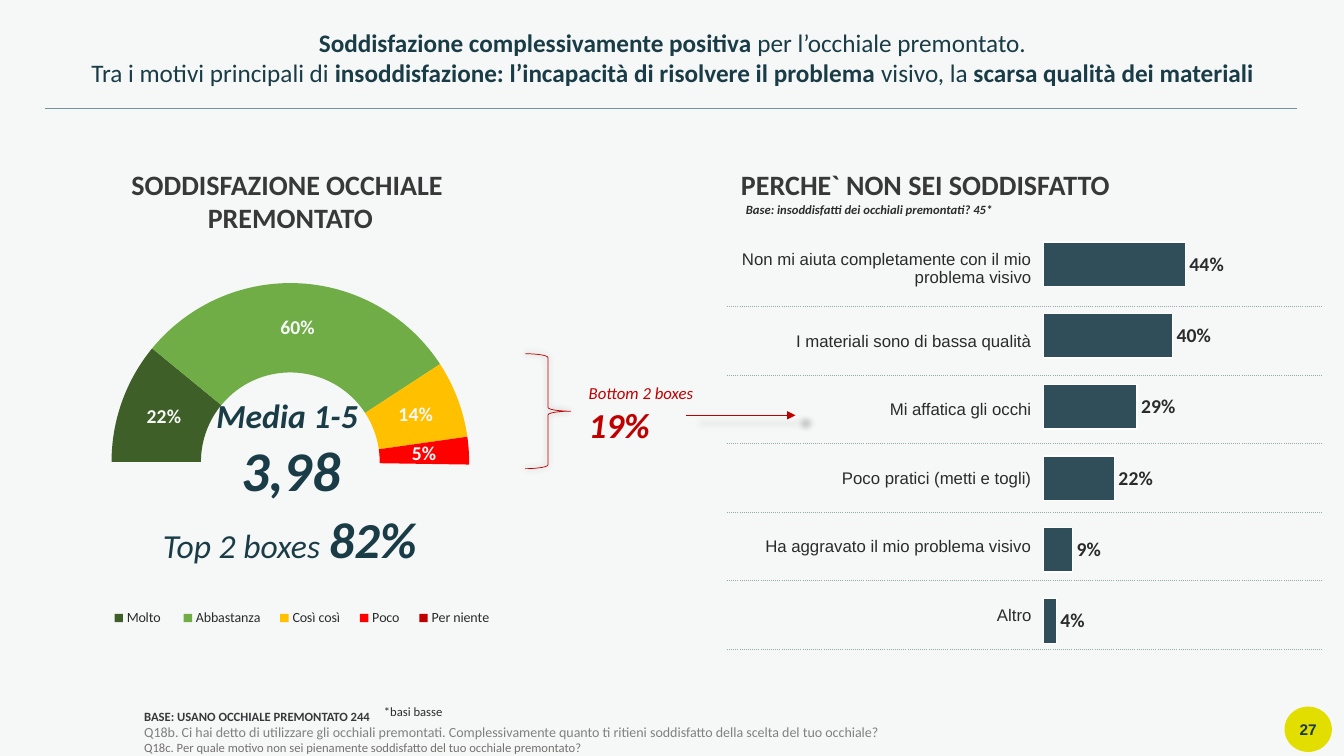
from dataclasses import dataclass
from lxml import etree
from pptx import Presentation
from pptx import util as u
from pptx.chart import data as cd
from pptx.dml import color as dml
from pptx.enum import chart as ce, shapes as se, text as te
from pptx.oxml import parse_xml
from pptx.oxml.ns import nsdecls, qn

HEX = {"back": "F6F8F8", "navy": "1A3C47", "deep": "193B47", "dark": "383839", "ink": "2B2B2B",
       "gray": "808080", "dim": "767171", "red": "C00000", "rule": "76929C", "dots": "95ACAC",
       "lime": "E2DE00", "bar": "304E59", "white": "FFFFFF"}
RING = ["3E5F27", "70AD47", "FFC000", "FF0000", "C00000"]
LEFT, MID, RIGHT = te.PP_ALIGN.LEFT, te.PP_ALIGN.CENTER, te.PP_ALIGN.RIGHT
TOP, CORE, BASE = te.MSO_ANCHOR.TOP, te.MSO_ANCHOR.MIDDLE, te.MSO_ANCHOR.BOTTOM


@dataclass
class Run:
    text: str
    size: float
    tint: str
    bold: bool = False
    slant: bool = False
    face: str = "Calibri"


@dataclass
class Box:
    at: tuple[float, float, float, float]
    lines: list[list[Run]]
    align: te.PP_ALIGN = LEFT
    hold: te.MSO_ANCHOR = TOP
    wrap: bool = True
    inset: bool = True
    pitch: float = 1.0


def rgb(name: str) -> dml.RGBColor:
    return dml.RGBColor.from_string(HEX.get(name, name))


def inch(at: tuple) -> list:
    return [u.Inches(v) for v in at]


def style(font, size: float, tint: str, bold: bool = False, face: str = "Calibri") -> None:
    font.size, font.bold, font.name = u.Pt(size), bold, face
    font.color.rgb = rgb(tint)


def write(frame, lines: list[list[Run]], align, pitch: float = 1.0) -> None:
    for i, line in enumerate(lines):
        para = frame.add_paragraph() if i else frame.paragraphs[0]
        para.alignment, para.line_spacing = align, pitch
        for run in line:
            if run.text == "\n":
                para.add_line_break()
                continue
            part = para.add_run()
            part.text = run.text
            style(part.font, run.size, run.tint, run.bold, run.face)
            part.font.italic = run.slant


def fill_box(shape, box: Box) -> None:
    shape.left, shape.top, shape.width, shape.height = inch(box.at)
    frame = shape.text_frame
    frame.auto_size = te.MSO_AUTO_SIZE.NONE
    frame.word_wrap, frame.vertical_anchor = box.wrap, box.hold
    side, edge = (0.1, 0.05) if box.inset else (0, 0)
    frame.margin_left = frame.margin_right = u.Inches(side)
    frame.margin_top = frame.margin_bottom = u.Inches(edge)
    write(frame, box.lines, box.align, box.pitch)


def draw_line(slide, ends: tuple, tint: str):
    line = slide.shapes.add_connector(se.MSO_CONNECTOR.STRAIGHT, *inch(ends))
    line.line.color.rgb, line.line.width = rgb(tint), u.Pt(0.5)
    etree.SubElement(line._element.spPr, qn("a:effectLst"))
    return line


def shade(shape, scale: int) -> None:
    """Soft black glow; scale is in percent."""
    glow = shape._element.spPr.find(qn("a:effectLst"))
    glow.append(parse_xml(
        f'<a:outerShdw {nsdecls("a")} blurRad="63500" sx="{scale}000" sy="{scale}000" algn="ctr" '
        'rotWithShape="0"><a:srgbClr val="000000"><a:alpha val="40000"/></a:srgbClr></a:outerShdw>'))


def place(host, spot: int, at: tuple, inner: bool) -> None:
    """Fix the place of a plot or legend as shares of the chart."""
    for old in host.findall(qn("c:layout")):
        host.remove(old)
    goal = '<c:layoutTarget val="inner"/>' if inner else ""
    modes = "".join(f'<c:{k}Mode val="edge"/>' for k in "xy")
    sizes = "".join(f'<c:{k} val="{v}"/>' for k, v in zip("xywh", at))
    host.insert(spot, parse_xml(f'<c:layout {nsdecls("c")}><c:manualLayout>{goal}{modes}{sizes}'
                                '</c:manualLayout></c:layout>'))


def add_chart(slide, kind, at: tuple, cats: list, vals: list, plot: tuple, size: float, tint: str):
    data = cd.CategoryChartData(number_format="0%")
    data.categories = cats
    data.add_series("Series 1", vals)
    chart = slide.shapes.add_chart(kind, *inch(at), data).chart
    chart.has_title = chart.has_legend = False
    style(chart.font, size, tint)
    place(chart._chartSpace.chart.plotArea, 0, plot, True)
    tags = chart.plots[0].series[0].data_labels
    tags.show_value, tags.number_format, tags.number_format_is_linked = True, "0%", False
    style(tags.font, 14, tint, True)
    return chart


def add_ring(slide) -> None:
    cats = ["Molto ", "Abbastanza", "Così così", "Poco", "Per niente", ""]
    chart = add_chart(slide, ce.XL_CHART_TYPE.DOUGHNUT, (-0.91, 2.36, 7.58, 4.49), cats,
                      [0.22, 0.6, 0.14, 0.05, None, 1], (0.21, 0.1, 0.58, 0.79), 10, "back")
    plot = chart.plots[0]
    plot.vary_by_categories = True
    ring = plot._element
    ring.find(qn("c:firstSliceAng")).set("val", "270")
    ring.find(qn("c:holeSize")).set("val", "70")
    row = plot.series[0]
    for i in range(len(cats)):
        form = row.points[i].format
        form.line.fill.background()
        if i < len(RING):
            form.fill.solid()
            form.fill.fore_color.rgb = rgb(RING[i])
        else:
            form.fill.background()
    tags = row.data_labels._element
    for spot, i in enumerate((4, 5)):
        tags.insert(spot, parse_xml(f'<c:dLbl {nsdecls("c")}><c:idx val="{i}"/><c:delete val="1"/></c:dLbl>'))
    # Legend without the hidden half
    chart.has_legend = True
    key = chart.legend
    key.position, key.include_in_layout = ce.XL_LEGEND_POSITION.BOTTOM, False
    style(key.font, 10, "ink")
    place(key._element, 1, (0.25, 0.81, 0.53, 0.06), False)
    key._element.insert(1, parse_xml(
        f'<c:legendEntry {nsdecls("c")}><c:idx val="5"/><c:delete val="1"/></c:legendEntry>'))


def add_bars(slide) -> None:
    chart = add_chart(slide, ce.XL_CHART_TYPE.BAR_CLUSTERED, (10.15, 2.18, 4, 4.38), list("123456"),
                      [0.44, 0.4, 0.29, 0.22, 0.09, 0.04], (0.05, 0.02, 0.72, 0.97), 9, "ink")
    plot = chart.plots[0]
    plot.gap_width, plot.vary_by_categories = 60, False
    axis, scale = chart.category_axis, chart.value_axis
    axis.reverse_order = True
    scale.minimum_scale, scale.maximum_scale = 0, 0.9
    scale.has_major_gridlines = axis.visible = scale.visible = False
    row = plot.series[0]
    row.data_labels.position = ce.XL_LABEL_POSITION.OUTSIDE_END
    form = row.format
    form.fill.solid()
    form.fill.fore_color.rgb = rgb("bar")
    form.line.color.rgb, form.line.width = rgb("white"), u.Pt(1)


def add_grid(slide, rows: list[str]) -> None:
    grid = slide.shapes.add_table(len(rows), 2, *inch((7.21, 2.28, 5.9, 4.16))).table
    grid.first_row = grid.horz_banding = False
    # Plain style, no grid
    grid._tbl.tblPr.find(qn("a:tableStyleId")).text = "{2D5ABB26-0587-4C30-8999-92F81FD0307C}"
    grid.columns[0].width, grid.columns[1].width = u.Inches(3.03), u.Inches(2.87)
    for i, words in enumerate(rows):
        grid.rows[i].height = u.Inches(0.68 if i else 0.76)
        for cell in grid.rows[i].cells:
            cell.fill.background()
            cell.vertical_anchor = CORE
            cell.margin_left = cell.margin_right = cell.margin_top = u.Inches(0.01)
            cell.margin_bottom = 0
            cell._tc.get_or_add_tcPr().insert(0, parse_xml(
                f'<a:lnB {nsdecls("a")} w="6350"><a:solidFill><a:srgbClr val="{HEX["dots"]}"/></a:solidFill>'
                '<a:prstDash val="sysDot"/></a:lnB>'))
        write(grid.cell(i, 0).text_frame, [[Run(words, 12, "ink", face="Arial")]], RIGHT)


TITLE = Box((0.34, 0.22, 12.66, 0.71), [
    [Run("Soddisfazione complessivamente positiva ", 18, "navy", True),
     Run("per l’occhiale premontato.", 18, "navy")],
    [Run("Tra i motivi principali di ", 18, "navy"),
     Run("insoddisfazione: l’incapacità di risolvere il problema ", 18, "navy", True),
     Run("visivo, la ", 18, "navy"), Run("scarsa qualità dei materiali", 18, "navy", True)]], MID)
NOTES = [
    Box((1.43, 6.56, 11.9, 0.93), [
        [Run("BASE: USANO OCCHIALE PREMONTATO 244", 9, "dark", True)],
        [Run("Q18b. Ci hai detto di utilizzare gli occhiali premontati. Complessivamente quanto ti "
             "ritieni soddisfatto della scelta del tuo occhiale?", 10, "gray")],
        [Run("Q18c. Per quale motivo non sei pienamente soddisfatto del tuo occhiale premontato?", 9, "dim")]],
        hold=BASE, inset=False, pitch=0.95),
    Box((-0.27, 1.61, 6.3, 0.77), [[Run("SODDISFAZIONE OCCHIALE ", 20, "dark", True)],
                                   [Run("PREMONTATO", 20, "dark", True)]], MID),
    Box((2.04, 3.86, 1.69, 1.18), [[Run("Media 1-5 ", 24, "navy", True, True), Run("\n", 24, "navy"),
                                    Run("3,98", 40, "navy", True, True)]], MID, CORE, False),
    Box((0.47, 4.99, 4.81, 0.71), [[Run("Top 2 boxes", 24, "navy", slant=True), Run(" ", 28, "navy", slant=True),
                                    Run("82%", 36, "navy", True, True)]], MID),
    Box((6.03, 1.61, 6.3, 0.44), [[Run("PERCHE` NON SEI SODDISFATTO", 20, "dark", True)]], MID),
    Box((5.74, 3.75, 2.19, 0.72), [[Run("Bottom 2 boxes", 12, "red", slant=True)],
                                   [Run("19%", 25, "red", True, True)]]),
    Box((7.3, 1.95, 2.68, 0.25),
        [[Run("Base: insoddisfatti dei occhiali premontati? 45*", 9, "ink", True, True)]], wrap=False),
    Box((3.71, 6.93, 2.04, 0.25), [[Run("*basi basse", 9, "ink")]])]
CAUSES = ["Non mi aiuta completamente con il mio problema visivo", "I materiali sono di bassa qualità",
          "Mi affatica gli occhi", "Poco pratici (metti e togli)", "Ha aggravato il mio problema visivo", "Altro"]


def main() -> None:
    deck = Presentation()
    deck.slide_width, deck.slide_height = u.Inches(13.33), u.Inches(7.5)
    slide = deck.slides.add_slide(deck.slide_layouts[5])
    slide.background.fill.solid()
    slide.background.fill.fore_color.rgb = rgb("back")
    # Title, rule and page badge
    fill_box(slide.shapes.title, TITLE)
    draw_line(slide, (0.45, 1.08, 12.86, 1.08), "rule")
    at = (12.74, 7.01, 0.47, 0.45)
    badge = slide.shapes.add_shape(se.MSO_SHAPE.OVAL, *inch(at))
    badge.shadow.inherit = False
    badge.fill.solid()
    badge.fill.fore_color.rgb = rgb("lime")
    badge.line.fill.background()
    fill_box(badge, Box(at, [[Run("27", 11, "deep", True, face="Arial")]], MID, CORE, inset=False))
    # Causes, charts and notes
    add_grid(slide, CAUSES)
    add_ring(slide)
    add_bars(slide)
    for note in NOTES:
        fill_box(slide.shapes.add_textbox(*inch(note.at)), note)
    # Brace and arrow
    brace = slide.shapes.add_shape(se.MSO_SHAPE.RIGHT_BRACE, *inch((5.21, 3.51, 0.45, 1.14)))
    brace.shadow.inherit = False
    brace.fill.background()
    brace.line.color.rgb, brace.line.width = rgb("red"), u.Pt(0.5)
    shade(brace, 100)
    arrow = draw_line(slide, (6.8, 4.12, 7.89, 4.12), "red")
    etree.SubElement(arrow.line._get_or_add_ln(), qn("a:tailEnd"), type="triangle")
    shade(arrow, 102)
    deck.save("out.pptx")


if __name__ == "__main__":
    main()
